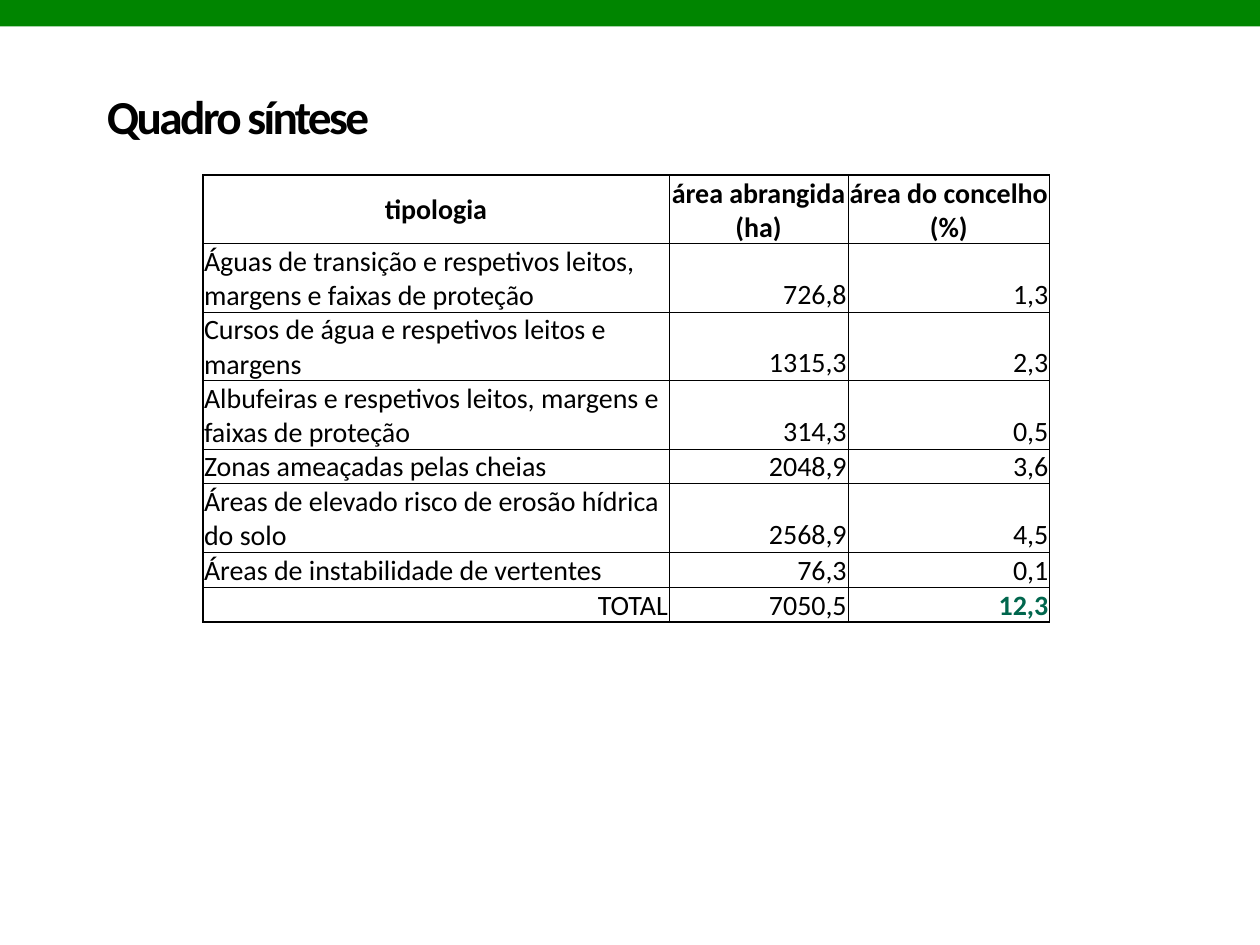
from lxml.etree import SubElement
from pptx import Presentation
from pptx.dml.color import RGBColor
from pptx.enum.shapes import MSO_SHAPE as Shape
from pptx.enum.text import MSO_ANCHOR as Anchor, PP_ALIGN as Align
from pptx.oxml.ns import qn
from pptx.util import Inches, Pt

FONT = "Calibri"
BLACK, GREEN, TEAL = "000000", "008500", "00664D"
TITLE = "Quadro síntese"
HEAD = ("tipologia", "área abrangida (ha)", "área do concelho (%)")
BODY = [
    ("Águas de transição e respetivos leitos, margens e faixas de proteção", "726,8", "1,3"),
    ("Cursos de água e respetivos leitos e margens", "1315,3", "2,3"),
    ("Albufeiras e respetivos leitos, margens e faixas de proteção", "314,3", "0,5"),
    ("Zonas ameaçadas pelas cheias", "2048,9", "3,6"),
    ("Áreas de elevado risco de erosão hídrica do solo", "2568,9", "4,5"),
    ("Áreas de instabilidade de vertentes", "76,3", "0,1"),
]
TOTAL = ("TOTAL", "7050,5", "12,3")
ROWS = [HEAD, *BODY, TOTAL]
COLS = (3.7, 1.42, 1.6)
HEIGHTS = (0.42, 0.42, 0.42, 0.42, 0.21, 0.42, 0.21, 0.22)


def rgb(code):
    return RGBColor.from_string(code)


def write(frame, text, size, color=BLACK, bold=False, align=Align.LEFT):
    para = frame.paragraphs[0]
    para.alignment = align
    run = para.add_run()
    run.text = text
    font = run.font
    font.name, font.size, font.bold = FONT, Pt(size), bold
    font.color.rgb = rgb(color)
    return run


def border(cell, widths):
    """Draw the cell's sides; widths maps L, R, T, B to points."""
    props = cell._tc.get_or_add_tcPr()
    for at, (side, width) in enumerate(widths.items()):
        line = props.makeelement(qn(f"a:ln{side}"), {"w": str(Pt(width))})
        fill = SubElement(line, qn("a:solidFill"))
        SubElement(fill, qn("a:srgbClr"), val=BLACK)
        props.insert(at, line)


def add_bar(slide, width):
    bar = slide.shapes.add_shape(Shape.RECTANGLE, 0, 0, width, Inches(0.21))
    bar.shadow.inherit = False
    bar.fill.solid()
    bar.fill.fore_color.rgb = rgb(GREEN)
    bar.line.fill.background()


def add_title(slide):
    box = slide.shapes.add_textbox(Inches(0.75), Inches(0.6), Inches(8.74), Inches(0.63))
    frame = box.text_frame
    frame.word_wrap = True
    frame.vertical_anchor = Anchor.MIDDLE
    run = write(frame, TITLE, 27, bold=True)
    run._r.get_or_add_rPr().set("spc", "-150")


def add_grid(slide):
    last, end = len(ROWS) - 1, len(COLS) - 1
    table = slide.shapes.add_table(
        len(ROWS), len(COLS), Inches(1.61), Inches(1.39),
        Inches(sum(COLS)), Inches(sum(HEIGHTS))).table
    table.first_row = table.horz_banding = False
    for col, width in zip(table.columns, COLS):
        col.width = Inches(width)
    for row, height in zip(table.rows, HEIGHTS):
        row.height = Inches(height)

    for r, texts in enumerate(ROWS):
        for c, text in enumerate(texts):
            cell = table.cell(r, c)
            head, sum_cell = r == 0, (r, c) == (last, end)
            cell.margin_left = cell.margin_right = cell.margin_top = Inches(0.01)
            cell.margin_bottom = 0
            cell.vertical_anchor = Anchor.MIDDLE if head else Anchor.BOTTOM
            cell.fill.background()
            if head:
                align = Align.CENTER
            else:
                align = Align.RIGHT if c or r == last else Align.LEFT
            write(cell.text_frame, text, 16, TEAL if sum_cell else BLACK,
                  head or sum_cell, align)
            edges = {"L": c == 0, "R": c == end, "T": r == 0, "B": r == last}
            border(cell, {side: 1 if outer else 0.5 for side, outer in edges.items()})


def main():
    deck = Presentation()
    deck.slide_width, deck.slide_height = Inches(10), Inches(7.5)
    slide = deck.slides.add_slide(deck.slide_layouts[6])
    add_bar(slide, deck.slide_width)
    add_title(slide)
    add_grid(slide)
    deck.save("out.pptx")


if __name__ == "__main__":
    main()
